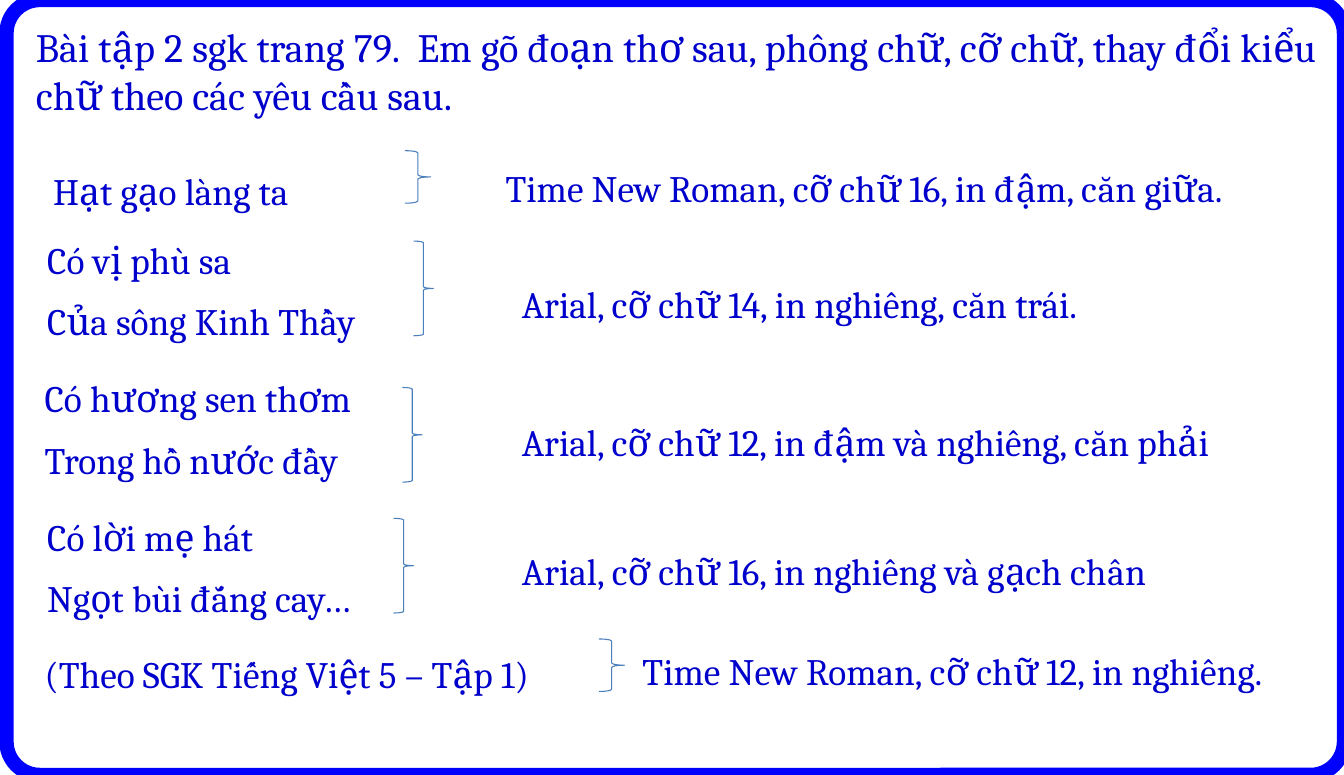
import pptx
import pptx.util
import pptx.dml.color
import pptx.enum.shapes
import pptx.enum.text

TEXT_BLUE = pptx.dml.color.RGBColor(0x00, 0x00, 0xCC)
FRAME_BLUE = pptx.dml.color.RGBColor(0x00, 0x00, 0xFF)
BRACE_BLUE = pptx.dml.color.RGBColor(0x4B, 0x7E, 0xBC)
SHAPES = pptx.enum.shapes.MSO_SHAPE

presentation = pptx.Presentation()
presentation.slide_width = pptx.util.Inches(13)
presentation.slide_height = pptx.util.Inches(7.5)
slide = presentation.slides.add_slide(presentation.slide_layouts[6])
COLUMN = presentation.slide_width / 156
ROW = presentation.slide_height / 90


def add_text(text, left, top, width, height, size=26, line_spacing=1.2):
    box = slide.shapes.add_textbox(
        round(left * COLUMN), round(top * ROW), round(width * COLUMN), round(height * ROW))
    frame = box.text_frame
    frame.word_wrap = True
    frame.text = text
    for paragraph in frame.paragraphs:
        paragraph.alignment = pptx.enum.text.PP_ALIGN.JUSTIFY
        paragraph.line_spacing = line_spacing
        paragraph.space_before = pptx.util.Pt(size * 0.2)
        paragraph.font.size = pptx.util.Pt(size)
        paragraph.font.name = "Cambria"
        paragraph.font.color.rgb = TEXT_BLUE


def add_outline(kind, left, top, width, height, color, weight):
    shape = slide.shapes.add_shape(
        kind, round(left * COLUMN), round(top * ROW), round(width * COLUMN), round(height * ROW))
    shape.shadow.inherit = False
    shape.fill.background()
    shape.line.color.rgb = color
    shape.line.width = pptx.util.Pt(weight)
    return shape


add_text("Bài tập 2 sgk trang 79.  Em gõ đoạn thơ sau, phông chữ, cỡ chữ, "
         "thay đổi kiểu chữ theo các yêu cầu sau.",
         3, 2, 151, 14, size=28, line_spacing=1.0)
border = add_outline(SHAPES.ROUNDED_RECTANGLE, 0.75, 0, 155.25, 90, FRAME_BLUE, 10)
border.adjustments[0] = 0.043

verses = [
    ("Hạt gạo làng ta", 5, 17.9, 41.6, 8),
    ("Có vị phù sa\nCủa sông Kinh Thầy", 4.3, 25.9, 44.6, 16.1),
    ("Có hương sen thơm\nTrong hồ nước đầy", 4, 42, 43, 16.1),
    ("Có lời mẹ hát\nNgọt bùi đắng cay…", 4.3, 58.1, 41.9, 16.1),
    ("(Theo SGK Tiếng Việt 5 – Tập 1)", 4, 74, 68, 8),
]
requirements = [
    ("Time New Roman, cỡ chữ 16, in đậm, căn giữa.", 57.5, 17.5, 96.6, 8),
    ("Arial, cỡ chữ 14, in nghiêng, căn trái.", 59.4, 31, 82.3, 8),
    ("Arial, cỡ chữ 12, in đậm và nghiêng, căn phải", 59.4, 47, 94.6, 9),
    ("Arial, cỡ chữ 16, in nghiêng và gạch chân", 59.4, 62, 87, 7),
    ("Time New Roman, cỡ chữ 12, in nghiêng.", 73.4, 73.7, 84, 8),
]
for text, left, top, width, height in verses + requirements:
    add_text(text, left, top, width, height)

one_line = (3, 6.1)
two_lines = (2.3, 11)
braces = [
    (47, 17.5, one_line),
    (48, 28, two_lines),
    (46.7, 45, two_lines),
    (45.7, 60.2, two_lines),
    (69.5, 74.2, one_line),
]
for left, top, (width, height) in braces:
    add_outline(SHAPES.RIGHT_BRACE, left, top, width, height, BRACE_BLUE, 0.75)

presentation.save("out.pptx")
